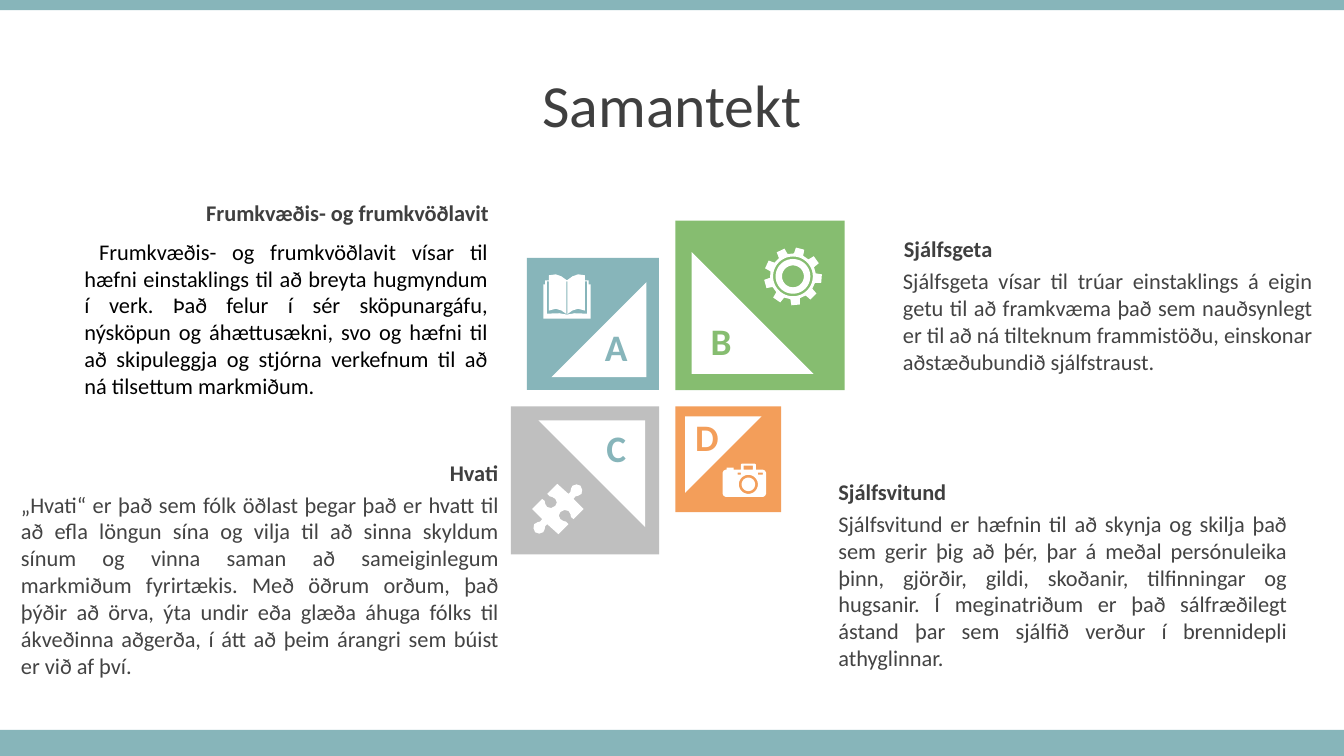
from math import cos, sin, radians
from pptx import Presentation
from pptx.dml.color import RGBColor as RGB
from pptx.enum.shapes import MSO_SHAPE as Kind
from pptx.enum.text import MSO_ANCHOR as Anchor, PP_ALIGN as Align
from pptx.util import Pt

TEAL, GREEN, ORANGE, GREY = "87B5BA", "86BD70", "F39E5A", "BFBFBF"
WHITE, BLACK, DARK, INK = "FFFFFF", "000000", "3F3F3F", "434343"
WIDE, HIGH = 960, 540


def tint(code):
    return RGB.from_string(code)


def box(left, top, right, foot):
    return [(left, top), (right, top), (right, foot), (left, foot)]


def ring(x, y, size):
    return [(x + size * cos(radians(a)), y + size * sin(radians(a)))
            for a in range(0, 360, 6)]


class Deck:
    font = "Calibri"

    def __init__(self):
        self.file = Presentation()
        self.file.slide_width, self.file.slide_height = Pt(WIDE), Pt(HIGH)
        self.slide = self.file.slides.add_slide(self.file.slide_layouts[6])
        self.shapes = self.slide.shapes

    def paint(self, shape, color):
        shape.shadow.inherit = False
        shape.fill.solid()
        shape.fill.fore_color.rgb = tint(color)
        shape.line.fill.background()

    def block(self, kind, left, top, width, height, color, turn=0):
        shape = self.shapes.add_shape(kind, Pt(left), Pt(top), Pt(width), Pt(height))
        shape.rotation = turn
        self.paint(shape, color)

    def icon(self, *loops, x=0, y=0):
        """Draw one shape from closed loops; inner loops cut holes."""
        loops = [[(Pt(x + a), Pt(y + b)) for a, b in loop] for loop in loops]
        pen = self.shapes.build_freeform(*loops[0][0])
        for at, loop in enumerate(loops):
            if at:
                pen.move_to(*loop[0])
            pen.add_line_segments(loop[1:], close=True)
        self.paint(pen.convert_to_shape(), WHITE)

    def text(self, words, left, top, width, height, align, size=16,
             color=DARK, bold=False, anchor=Anchor.TOP, space=1, indent=0):
        frame = self.shapes.add_textbox(Pt(left), Pt(top), Pt(width), Pt(height)).text_frame
        style = dict(word_wrap=True, vertical_anchor=anchor, margin_left=Pt(7.2),
                     margin_right=Pt(7.2), margin_top=Pt(3.6), margin_bottom=Pt(3.6))
        for name, value in style.items():
            setattr(frame, name, value)
        para = frame.paragraphs[0]
        para.alignment, para.line_spacing = align, space
        if indent:
            para._p.get_or_add_pPr().set("indent", str(Pt(indent)))
        run = para.add_run()
        run.text = words
        for name, value in dict(name=self.font, size=Pt(size), bold=bold).items():
            setattr(run.font, name, value)
        run.font.color.rgb = tint(color)


def draw_book(deck):
    cover = [(0, 4.3), (4, 1.4), (8, 0), (12.9, 0.7), (12.9, 4.3), (15.5, 4.3),
             (15.5, 7.2), (16.9, 7.2), (16.9, 31.7), (0, 31.7)]
    fold = [(0, 5), (0.4, 5), (0.4, 28.3), (4, 25.8), (8, 24.6), (12.9, 25.9),
            (12.9, 5), (14.4, 5), (14.4, 28.1), (5.5, 27.8), (0, 28.8)]
    loops = [half + [(-a, b) for a, b in reversed(half)] for half in (cover, fold)]
    deck.icon(*loops, x=405, y=196)


def draw_gear(deck):
    rim = []
    for tooth in range(9):
        mid = tooth * 40 - 75.5
        for turn, size in ((-12, 16.4), (-8.5, 20.7), (8.5, 20.7), (12, 16.4)):
            angle = radians(mid + turn)
            rim.append((size * cos(angle), size * sin(angle)))
    deck.icon(rim, *(ring(0, 0, size) for size in (14.2, 12.4, 7.8)), x=566.4, y=197.4)


def draw_piece(deck):
    half = [(16.2, -16.6), (17.4, -13.7), (16.9, -10.8), (14.4, -9.4), (12.6, -9),
            (11.2, -7.2), (18.4, 0), (11.2, 7.2), (9.4, 5.8), (9, 3.6), (7.6, 1.4),
            (4.7, 0.7), (1.8, 2.2), (0.7, 4.7), (1.8, 7.2), (4, 8.6), (5.8, 9),
            (7.6, 10.8), (0.4, 18), (-7.6, 10.8), (-9, 12.2), (-9.4, 14.4),
            (-10.4, 16.6), (-13.3, 17.6)]
    deck.icon(half + [(-a, -b) for a, b in half], x=398.5, y=363.6)


def draw_camera(deck):
    body = [(0, 6.5), (0.7, 5), (2.2, 4.3), (2.9, 4.3), (2.9, 2.9), (7.9, 2.9),
            (7.9, 4.3), (13, 4.3), (13, 0.7), (13.7, 0), (23, 0), (23.8, 0.7),
            (23.8, 4.3), (28.8, 4.3), (30.3, 5), (31, 6.5), (31, 21.6), (30.3, 23),
            (28.8, 23.8), (2.2, 23.8), (0.7, 23), (0, 21.6)]
    deck.icon(body, box(15.1, 1.4, 21.6, 4.3), box(10.8, 6.5, 13, 7.9),
              box(25.2, 6.5, 28.8, 7.9), ring(18.4, 14.8, 6.8), ring(18.4, 14.8, 4.8),
              x=516.2, y=331.2)


def main():
    deck = Deck()

    # Bands and title
    deck.block(Kind.RECTANGLE, 0, 521.3, WIDE, 18.7, TEAL)
    deck.block(Kind.RECTANGLE, 0, 0, WIDE, 7.2, TEAL)
    deck.text("Samantekt", 0, 46.8, WIDE, 60.5, Align.CENTER, 42.7,
              anchor=Anchor.MIDDLE, space=0.9)

    # Squares, each with a triangle: left, top, side
    tiles = [
        (TEAL, (376.4, 184.2, 94.3), (393.9, 201.6, 67.8), 270),
        (GREEN, (482.4, 157.6, 121), (494, 180, 87.1), 0),
        (ORANGE, (482.4, 290.2, 75.6), (489.4, 297.4, 54.6), 90),
        (GREY, (365, 290.2, 105.8), (384.5, 300.2, 76.3), 180),
    ]
    for color, (left, top, side), (x, y, leg), turn in tiles:
        deck.block(Kind.RECTANGLE, left, top, side, side, color)
        deck.block(Kind.RIGHT_TRIANGLE, x, y, leg, leg, WHITE, turn)

    # Letters
    for mark, left, top, color in [("A", 419, 228.2, TEAL), ("B", 493.9, 223.9, GREEN),
                                   ("C", 419, 300.2, TEAL), ("D", 483.8, 292.3, ORANGE)]:
        deck.text(mark, left, top, 42.5, 39.6, Align.CENTER, 26.7, color, True)

    # Icons
    for draw in (draw_book, draw_piece, draw_gear, draw_camera):
        draw(deck)

    # Headings
    for words, left, top, width, align in [
        ("Frumkvæðis- og frumkvöðlavit", 14.4, 139, 342, Align.RIGHT),
        ("Hvati", 96.5, 324.7, 266.4, Align.RIGHT),
        ("Sjálfsgeta", 638.6, 164.2, 266.4, Align.LEFT),
        ("Sjálfsvitund", 591.8, 337.7, 266.4, Align.LEFT),
    ]:
        deck.text(words, left, top, width, 26.6, align, bold=True)

    # Body texts
    for words, left, top, width, height, color, indent in [
        ("Frumkvæðis- og frumkvöðlavit vísar til hæfni einstaklings til að breyta "
         "hugmyndum í verk. Það felur í sér sköpunargáfu, nýsköpun og áhættusækni, svo og "
         "hæfni til að skipuleggja og stjórna verkefnum til að ná tilsettum markmiðum.",
         53.3, 166.3, 302.4, 143.3, BLACK, 10.5),
        ("Sjálfsgeta vísar til trúar einstaklings á eigin getu til að framkvæma það sem "
         "nauðsynlegt er til að ná tilteknum frammistöðu, einskonar aðstæðubundið "
         "sjálfstraust.", 637.9, 187.2, 306.7, 85, INK, 0),
        ("Sjálfsvitund er hæfnin til að skynja og skilja það sem gerir þig að þér, þar á "
         "meðal persónuleika þinn, gjörðir, gildi, skoðanir, tilfinningar og hugsanir. Í "
         "meginatriðum er það sálfræðilegt ástand þar sem sjálfið verður í brennidepli "
         "athyglinnar.", 591.8, 360.7, 334.8, 123.8, INK, 0),
        ("„Hvati“ er það sem fólk öðlast þegar það er hvatt til að efla löngun sína og "
         "vilja til að sinna skyldum sínum og vinna saman að sameiginlegum markmiðum "
         "fyrirtækis. Með öðrum orðum, það þýðir að örva, ýta undir eða glæða áhuga fólks "
         "til ákveðinna aðgerða, í átt að þeim árangri sem búist er við af því.",
         7.9, 347, 355.7, 143.3, INK, 0),
    ]:
        deck.text(words, left, top, width, height, Align.JUSTIFY, color=color, indent=indent)

    deck.file.save("out.pptx")


if __name__ == "__main__":
    main()
